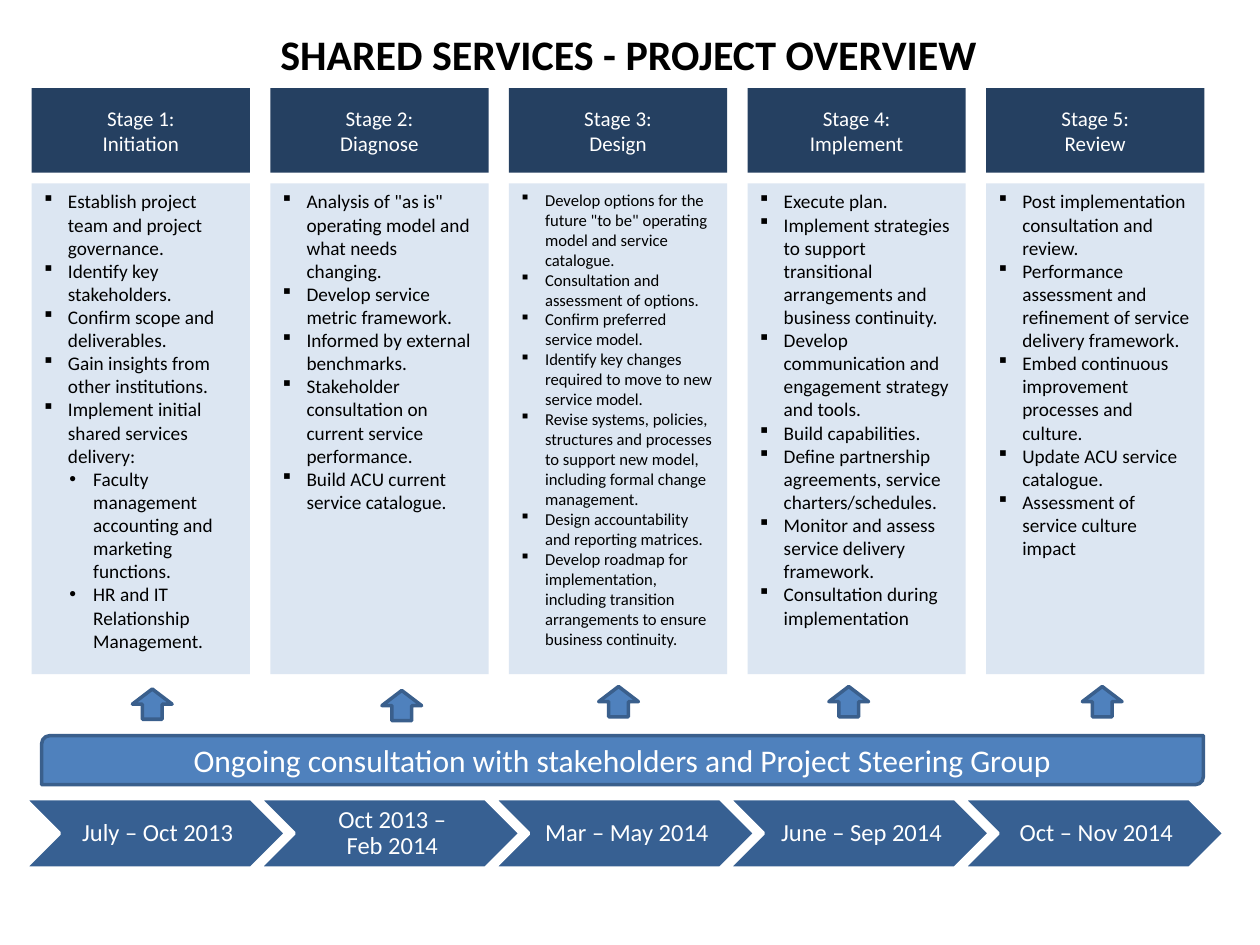
from lxml.etree import SubElement
from pptx import Presentation
from pptx.dml.color import RGBColor
from pptx.enum.shapes import MSO_SHAPE as Shape
from pptx.enum.text import MSO_ANCHOR as Anchor, PP_ALIGN as Align
from pptx.oxml.ns import qn
from pptx.util import Cm, Pt

FONT = "Calibri"
WHITE = RGBColor(0xFF, 0xFF, 0xFF)
BLACK = RGBColor(0x00, 0x00, 0x00)
NAVY = RGBColor(0x25, 0x40, 0x61)
PALE = RGBColor(0xDC, 0xE6, 0xF2)
STEEL = RGBColor(0x37, 0x60, 0x92)
BLUE = RGBColor(0x4F, 0x81, 0xBD)
OUTLINE = RGBColor(0x3A, 0x5F, 0x8C)

STAGES = [
    ("Initiation", 11, [
        "Establish project team and project governance.",
        "Identify key stakeholders.",
        "Confirm scope and deliverables.",
        "Gain insights from other institutions.",
        "Implement initial shared services delivery:",
        ("Faculty management accounting and marketing functions.",
         "HR and IT Relationship Management."),
    ]),
    ("Diagnose", 11, [
        'Analysis of "as is" operating model and what needs changing.',
        "Develop service metric framework.",
        "Informed by external benchmarks.",
        "Stakeholder consultation on current service performance.",
        "Build ACU current service catalogue.",
    ]),
    ("Design", 9.5, [
        'Develop options for the future "to be" operating model and service catalogue.',
        "Consultation and assessment of options.",
        "Confirm preferred service model.",
        "Identify key changes required to move to new service model.",
        "Revise systems, policies, structures and processes to support new model, "
        "including formal change management.",
        "Design accountability and reporting matrices.",
        "Develop roadmap for implementation, including transition arrangements "
        "to ensure business continuity.",
    ]),
    ("Implement", 11, [
        "Execute plan.",
        "Implement strategies to support transitional arrangements and business continuity.",
        "Develop communication and engagement strategy and tools.",
        "Build capabilities.",
        "Define partnership agreements, service charters/schedules.",
        "Monitor and assess service delivery framework.",
        "Consultation during implementation",
    ]),
    ("Review", 11, [
        "Post implementation consultation and review.",
        "Performance assessment and refinement of service delivery framework.",
        "Embed continuous improvement processes and culture.",
        "Update ACU service catalogue.",
        "Assessment of service culture impact",
    ]),
]
PERIODS = ["July – Oct 2013", "Oct 2013 –\vFeb 2014", "Mar – May 2014",
           "June – Sep 2014", "Oct – Nov 2014"]
ARROWS = [(2.67, 13.89), (7.7, 13.92), (12.07, 13.84), (16.71, 13.84), (21.82, 13.84)]


def add_box(slide, kind, left, top, width, height, fill, line=None):
    """Add a flat preset shape, measured in centimetres."""
    shape = slide.shapes.add_shape(kind, Cm(left), Cm(top), Cm(width), Cm(height))
    shape.shadow.inherit = False
    shape.fill.solid()
    shape.fill.fore_color.rgb = fill
    if line is None:
        shape.line.fill.background()
    else:
        shape.line.color.rgb = line
        shape.line.width = Pt(2)
    return shape


def style(paragraph, size, color, align=Align.CENTER, bold=False):
    """Set the alignment and font of a paragraph."""
    paragraph.alignment = align
    font = paragraph.font
    font.name, font.size, font.bold = FONT, Pt(size), bold
    font.color.rgb = color


def set_label(shape, text, size, color, bold=False):
    """Put one centred paragraph in the middle of a shape."""
    frame = shape.text_frame
    frame.word_wrap = True
    frame.vertical_anchor = Anchor.MIDDLE
    paragraph = frame.paragraphs[0]
    paragraph.text = text
    style(paragraph, size, color, bold=bold)
    return frame


def add_bullet(paragraph, text, level, size):
    """Fill a paragraph as a bulleted item of the given level."""
    paragraph.text = text
    paragraph.level = level
    properties = paragraph._p.get_or_add_pPr()
    properties.set("marL", str(Cm(0.48 + 0.51 * level)))
    properties.set("indent", str(-Cm(0.48)))
    SubElement(properties, qn("a:buFont"), typeface="Arial" if level else "Wingdings")
    SubElement(properties, qn("a:buChar"), char="•" if level else "§")
    style(paragraph, size, BLACK, Align.LEFT)


def add_title(slide, left, top, width, height):
    """Add the slide heading."""
    box = slide.shapes.add_textbox(Cm(left), Cm(top), Cm(width), Cm(height))
    set_label(box, "SHARED SERVICES - PROJECT OVERVIEW", 24, BLACK, bold=True)


def add_stage(slide, left, top, width, height, heading, size, items):
    """Add a stage heading with its list of activities below."""
    header = add_box(slide, Shape.RECTANGLE, left, top, width, 1.7, NAVY)
    set_label(header, heading, 12, WHITE)
    body = add_box(slide, Shape.RECTANGLE, left, top + 1.92, width, height - 1.92, PALE)
    frame = body.text_frame
    frame.word_wrap = True
    frame.vertical_anchor = Anchor.TOP
    entries = []
    for item in items:
        if isinstance(item, tuple):
            entries += [(text, 1) for text in item]
        else:
            entries.append((item, 0))
    for index, (text, level) in enumerate(entries):
        paragraph = frame.add_paragraph() if index else frame.paragraphs[0]
        add_bullet(paragraph, text, level, size)


def add_timeline(slide, left, top, pitch, width, height):
    """Add the row of dated chevrons."""
    for index, period in enumerate(PERIODS):
        x = left + index * pitch
        add_box(slide, Shape.CHEVRON, x, top, width, height, STEEL, WHITE)
        box = slide.shapes.add_textbox(Cm(x + 0.7), Cm(top), Cm(width - 1.4), Cm(height))
        frame = set_label(box, period, 14, WHITE)
        frame.margin_left = Cm(0.15)
        frame.margin_top = frame.margin_right = frame.margin_bottom = Cm(0.05)
        frame.paragraphs[0].line_spacing = 0.9


def add_consultation(slide, left, top, width, height):
    """Add the consultation bar and the arrows rising from it."""
    bar = add_box(slide, Shape.ROUND_2_DIAG_RECTANGLE, left, top, width, height, BLUE, OUTLINE)
    set_label(bar, "Ongoing consultation with stakeholders and Project Steering Group", 18, WHITE)
    for x, y in ARROWS:
        add_box(slide, Shape.UP_ARROW, x, y, 0.8, 0.61, BLUE, OUTLINE)


def main():
    """Build the project overview slide."""
    presentation = Presentation()
    presentation.slide_width, presentation.slide_height = Cm(25.4), Cm(19.05)
    slide = presentation.slides.add_slide(presentation.slide_layouts[6])
    add_title(slide, 1.24, 0, 22.86, 2.16)
    for index, (name, size, items) in enumerate(STAGES):
        heading = f"Stage {index + 1}:\v{name}"
        add_stage(slide, 0.64 + 4.81 * index, 1.78, 4.4, 11.81, heading, size, items)
    add_timeline(slide, 0.5, 16.1, 4.73, 5.26, 1.4)
    add_consultation(slide, 0.84, 14.83, 23.42, 0.99)
    presentation.save("out.pptx")


if __name__ == "__main__":
    main()
